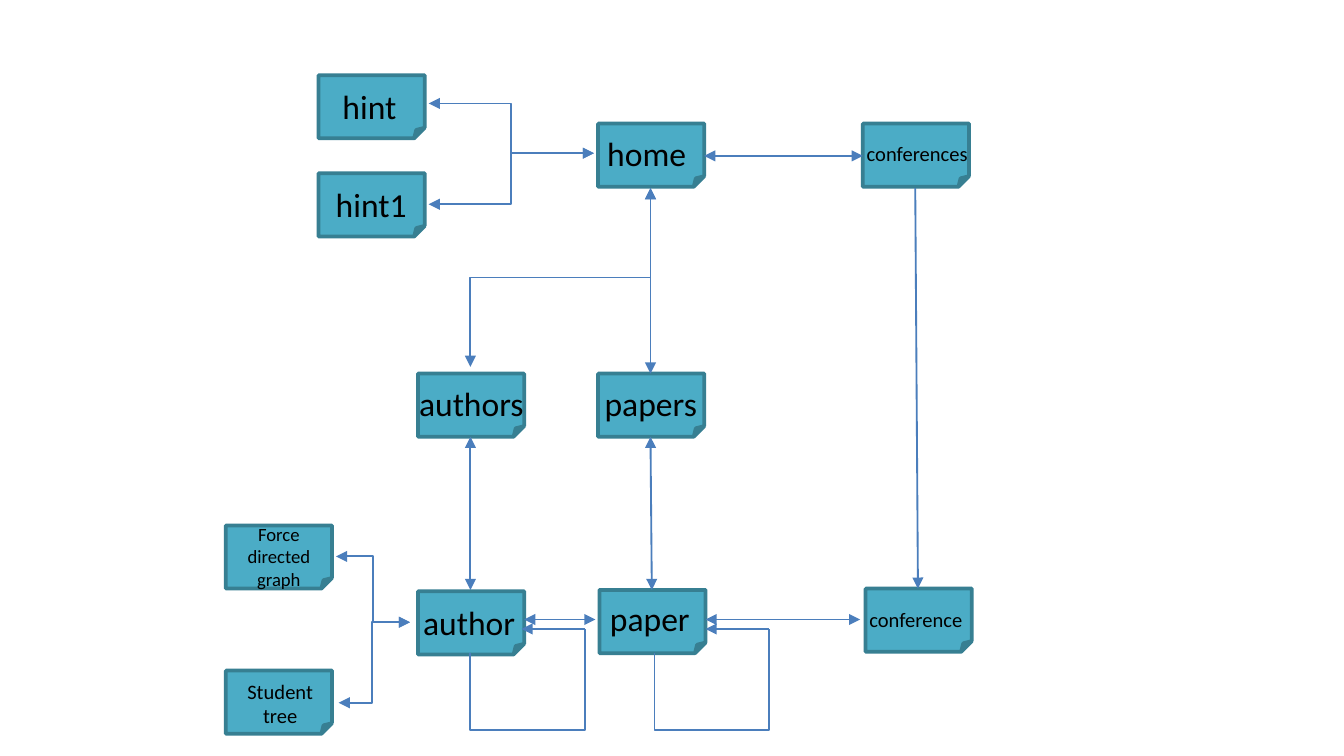
from lxml import etree
from pptx import Presentation
from pptx.dml.color import RGBColor
from pptx.enum.shapes import MSO_CONNECTOR, MSO_SHAPE
from pptx.enum.text import PP_ALIGN
from pptx.oxml.ns import qn
from pptx.util import Emu, Pt

PX = 9144  # EMU per px, 100 px to the inch
SLIDE_W = 1000  # the slide is 16:9
PAGE_W, PAGE_H = 79, 47
FONT = "Calibri"

TEAL = RGBColor(0x4B, 0xAC, 0xC6)
DARK_TEAL = RGBColor(0x37, 0x7F, 0x92)
BLUE = RGBColor(0x4B, 0x7E, 0xBC)
BLACK = RGBColor(0, 0, 0)

LEFT, CENTER = PP_ALIGN.LEFT, PP_ALIGN.CENTER

# Page: label, page left and top, label box, point size, alignment
PAGES = [
    ("home", (445, 92), (442, 94, 87, 40), 18, LEFT),
    ("conferences", (642, 92), (635, 100, 101, 29), 11, LEFT),
    ("authors", (311, 278), (302, 280, 100, 40), 18, LEFT),
    ("hint", (237, 56), (245, 59, 87, 40), 18, LEFT),
    ("hint1", (237, 129), (240, 132, 87, 40), 18, LEFT),
    ("papers", (445, 278), (440, 280, 98, 40), 18, LEFT),
    ("author", (311, 440), (305, 443, 91, 40), 18, LEFT),
    ("paper", (446, 439), (444, 440, 87, 40), 18, LEFT),
    ("conference", (644, 438), (637, 447, 92, 29), 11, LEFT),
    ("Force directed graph", (168, 391), (164, 384, 87, 61), 10, CENTER),
    ("Student tree", (168, 499), (165, 500, 87, 47), 11, CENTER),
]

# Links: start, end
TWO_WAY = [
    ((524, 116), (642, 116)),  # home - conferences
    ((484, 140), (484, 278)),  # home - papers
    ((350, 325), (350, 439)),  # authors - author
    ((484, 325), (485, 439)),  # papers - paper
    ((390, 461), (443, 461)),  # author - paper
    ((525, 461), (640, 461)),  # paper - conference
]
ONE_WAY = [((681, 140), (683, 438))]  # conferences - conference

# Elbows: start, end, position of the bend in percent
SIDE_ELBOWS = [
    ((442, 114), (319, 77), 50),     # home - hint
    ((442, 114), (319, 152), 50),    # home - hint1
    ((250, 414), (305, 463), 50),    # force directed graph - author
    ((252, 523), (305, 463), 47.3),  # student tree - author
]
DOWN_ELBOWS = [((484, 140), (350, 273))]  # home - authors

# Self links: left of the loop, x where its arrow ends
LOOPS = [(487, 525), (350, 388)]
LOOP_W, LOOP_START, LOOP_BOTTOM, LOOP_END = 85, 486, 543, 468


def px(*values):
    return [Emu(round(v * PX)) for v in values]


def add_page(shapes, label, corner, label_box, size, align):
    page = shapes.add_shape(MSO_SHAPE.FOLDED_CORNER, *px(*corner, PAGE_W, PAGE_H))
    page.shadow.inherit = False
    page.fill.solid()
    page.fill.fore_color.rgb = TEAL
    page.line.color.rgb = DARK_TEAL
    page.line.width = Pt(2)

    frame = shapes.add_textbox(*px(*label_box)).text_frame
    frame.word_wrap = True
    paragraph = frame.paragraphs[0]
    paragraph.alignment = align
    run = paragraph.add_run()
    run.text = label
    run.font.name = FONT
    run.font.size = Pt(size)
    run.font.color.rgb = BLACK


def add_link(shapes, start, end, kind=MSO_CONNECTOR.STRAIGHT, two_way=True):
    link = shapes.add_connector(kind, *px(*start, *end))
    link.line.color.rgb = BLUE
    link.line.width = Pt(1)
    properties = link._element.spPr
    line = properties.find(qn("a:ln"))
    for tag in ("a:headEnd", "a:tailEnd") if two_way else ("a:tailEnd",):
        etree.SubElement(line, qn(tag), type="triangle")
    etree.SubElement(properties, qn("a:effectLst"))
    return link


def add_side_elbow(shapes, start, end, bend):
    link = add_link(shapes, start, end, MSO_CONNECTOR.ELBOW)
    guides = link._element.spPr.find(qn("a:prstGeom")).find(qn("a:avLst"))
    etree.SubElement(guides, qn("a:gd"), name="adj1", fmla=f"val {round(bend * 1000)}")


def add_down_elbow(shapes, start, end):
    """Elbow that leaves downwards to the left: a sideways one turned by 90°."""
    (x1, y1), (x2, y2) = start, end
    mid_x, mid_y = (x1 + x2) / 2, (y1 + y2) / 2
    half_w, half_h = (y2 - y1) / 2, (x1 - x2) / 2
    link = add_link(shapes, (mid_x - half_w, mid_y - half_h),
                    (mid_x + half_w, mid_y + half_h), MSO_CONNECTOR.ELBOW)
    link._element.spPr.find(qn("a:xfrm")).set("rot", str(90 * 60000))


def add_loop(shapes, left, arrow_x):
    right = left + LOOP_W
    builder = shapes.build_freeform(left, LOOP_START, scale=PX)
    builder.add_line_segments(
        [(left, LOOP_BOTTOM), (right, LOOP_BOTTOM), (right, LOOP_END)], close=False)
    loop = builder.convert_to_shape()
    loop.shadow.inherit = False
    loop.fill.background()
    loop.line.color.rgb = BLUE
    loop.line.width = Pt(1)
    add_link(shapes, (right, LOOP_END), (arrow_x, LOOP_END), two_way=False)


def main():
    deck = Presentation()
    deck.slide_width, deck.slide_height = px(SLIDE_W, SLIDE_W * 9 / 16)
    shapes = deck.slides.add_slide(deck.slide_layouts[6]).shapes

    # Pages with their labels
    for page in PAGES:
        add_page(shapes, *page)

    # Links between pages
    for start, end in TWO_WAY:
        add_link(shapes, start, end)
    for start, end in ONE_WAY:
        add_link(shapes, start, end, two_way=False)
    for elbow in SIDE_ELBOWS:
        add_side_elbow(shapes, *elbow)
    for start, end in DOWN_ELBOWS:
        add_down_elbow(shapes, start, end)

    # Links from a page to itself
    for left, arrow_x in LOOPS:
        add_loop(shapes, left, arrow_x)

    deck.save("out.pptx")


if __name__ == "__main__":
    main()
